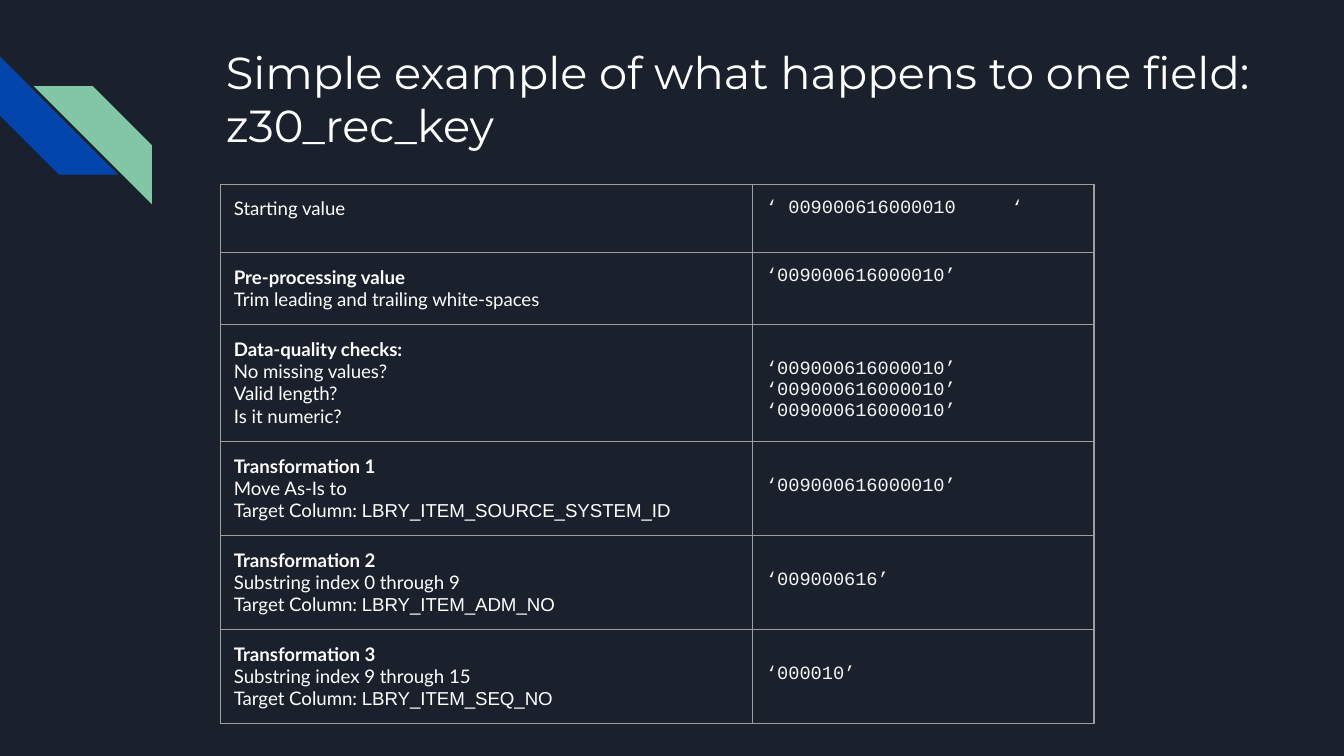
from dataclasses import dataclass

from lxml.etree import SubElement
from pptx import Presentation
from pptx.dml.color import RGBColor
from pptx.enum.shapes import MSO_SHAPE
from pptx.enum.text import MSO_ANCHOR, MSO_AUTO_SIZE, PP_ALIGN
from pptx.oxml.ns import qn
from pptx.util import Inches, Pt


@dataclass(frozen=True)
class Theme:
    back: str = "1B212C"
    blue: str = "0145AC"
    green: str = "82C7A5"
    white: str = "FFFFFF"
    pale: str = "F3F3F3"
    rule: str = "9E9E9E"
    rule_width: float = 0.75
    head_font: str = "Montserrat"
    text_font: str = "Lato"
    name_font: str = "Arial"
    code_font: str = "Courier New"
    head_size: int = 24
    text_size: int = 10


def write(par, text, font, size, color, bold=False):
    """Add one formatted run to a paragraph."""
    run = par.add_run()
    run.text = text
    run.font.name = font
    run.font.size = Pt(size)
    run.font.bold = bold
    run.font.color.rgb = RGBColor.from_string(color)


class Deck:
    def __init__(self, theme):
        self.theme = theme
        self.file = Presentation()
        self.file.slide_width = Inches(10)
        self.file.slide_height = Inches(5.625)
        self.slide = self.file.slides.add_slide(self.file.slide_layouts[5])
        fill = self.slide.background.fill
        fill.solid()
        fill.fore_color.rgb = RGBColor.from_string(theme.back)

    def stripe(self, left, top, size, color, turn=0, flip=False):
        shape = self.slide.shapes.add_shape(
            MSO_SHAPE.DIAGONAL_STRIPE,
            Inches(left), Inches(top), Inches(size), Inches(size))
        shape.shadow.inherit = False
        shape.fill.solid()
        shape.fill.fore_color.rgb = RGBColor.from_string(color)
        shape.line.fill.background()
        shape.rotation = turn
        if flip:
            shape._element.spPr.xfrm.set("flipH", "1")

    def title(self, text, left, top, width, height):
        shape = self.slide.shapes.title
        shape.left, shape.top = Inches(left), Inches(top)
        shape.width, shape.height = Inches(width), Inches(height)
        frame = shape.text_frame
        frame.word_wrap = True
        frame.auto_size = MSO_AUTO_SIZE.NONE
        frame.vertical_anchor = MSO_ANCHOR.TOP
        frame.margin_left = frame.margin_right = Inches(0.1)
        frame.margin_top = frame.margin_bottom = Inches(0.1)
        par = frame.paragraphs[0]
        par.alignment = PP_ALIGN.LEFT
        write(par, text, font=self.theme.head_font,
              size=self.theme.head_size, color=self.theme.white)

    def border(self, cell):
        props = cell._tc.get_or_add_tcPr()
        for spot, side in enumerate(("a:lnL", "a:lnR", "a:lnT", "a:lnB")):
            line = SubElement(props, qn(side), w=str(Pt(self.theme.rule_width)))
            fill = SubElement(line, qn("a:solidFill"))
            SubElement(fill, qn("a:srgbClr"), val=self.theme.rule)
            props.insert(spot, line)  # lines come before the fill

    def fill_cell(self, cell, lines, drop=0):
        """Each line is a list of (text, format) runs; drop lowers the text."""
        cell.fill.background()
        cell.vertical_anchor = MSO_ANCHOR.TOP
        cell.margin_left = cell.margin_right = Inches(0.1)
        cell.margin_top = Inches(0.1 + drop)
        cell.margin_bottom = Inches(0.1)
        self.border(cell)
        frame = cell.text_frame
        for spot, runs in enumerate(lines):
            par = frame.add_paragraph() if spot else frame.paragraphs[0]
            for text, form in runs:
                write(par, text, size=self.theme.text_size, **form)

    def table(self, rows, left, top, widths, heights):
        grid = self.slide.shapes.add_table(
            len(rows), len(widths), Inches(left), Inches(top),
            Inches(sum(widths)), Inches(sum(heights))).table
        grid.first_row = grid.horz_banding = False
        for col, width in zip(grid.columns, widths):
            col.width = Inches(width)
        for row, height in zip(grid.rows, heights):
            row.height = Inches(height)
        look = self.theme
        plain = {"font": look.text_font, "color": look.white}
        strong = {**plain, "bold": True}
        label = {"font": look.name_font, "color": look.white}
        code = {"font": look.code_font, "color": look.pale}
        for spot, (head, notes, target, values, drop) in enumerate(rows):
            lines = [[(head, strong if notes else plain)]]
            lines += [[(note, plain)] for note in notes]
            if target:
                lines.append([("Target Column: ", plain), (target, label)])
            self.fill_cell(grid.cell(spot, 0), lines)
            self.fill_cell(grid.cell(spot, 1),
                           [[(value, code)] for value in values], drop)


KEY = "‘009000616000010’"
DROP = 0.16  # one line of code text

# Heading, notes, target column, values, drop of the values
STEPS = [
    ("Starting value", [], None, ["‘ 009000616000010     ‘"], 0),
    ("Pre-processing value", ["Trim leading and trailing white-spaces"],
     None, [KEY], 0),
    ("Data-quality checks:",
     ["No missing values?", "Valid length?", "Is it numeric?"],
     None, [KEY] * 3, DROP),
    ("Transformation 1", ["Move As-Is to"],
     "LBRY_ITEM_SOURCE_SYSTEM_ID", [KEY], DROP),
    ("Transformation 2", ["Substring index 0 through 9"],
     "LBRY_ITEM_ADM_NO", ["‘009000616’"], DROP),
    ("Transformation 3", ["Substring index 9 through 15"],
     "LBRY_ITEM_SEQ_NO", ["‘000010’"], DROP),
]


def main():
    theme = Theme()
    deck = Deck(theme)

    # Corner stripes
    deck.stripe(0, 0.42, 0.88, theme.blue, turn=270)
    deck.stripe(0.25, 0.64, 0.88, theme.green, flip=True)

    # Title
    deck.title("Simple example of what happens to one field: z30_rec_key",
               1.58, 0.23, 7.98, 1.14)

    # Steps from the raw value to the target columns
    deck.table(STEPS, 1.64, 1.37, widths=[3.96, 2.54],
               heights=[0.51, 0.53, 0.87] + [0.7] * 3)

    deck.file.save("out.pptx")


if __name__ == "__main__":
    main()
